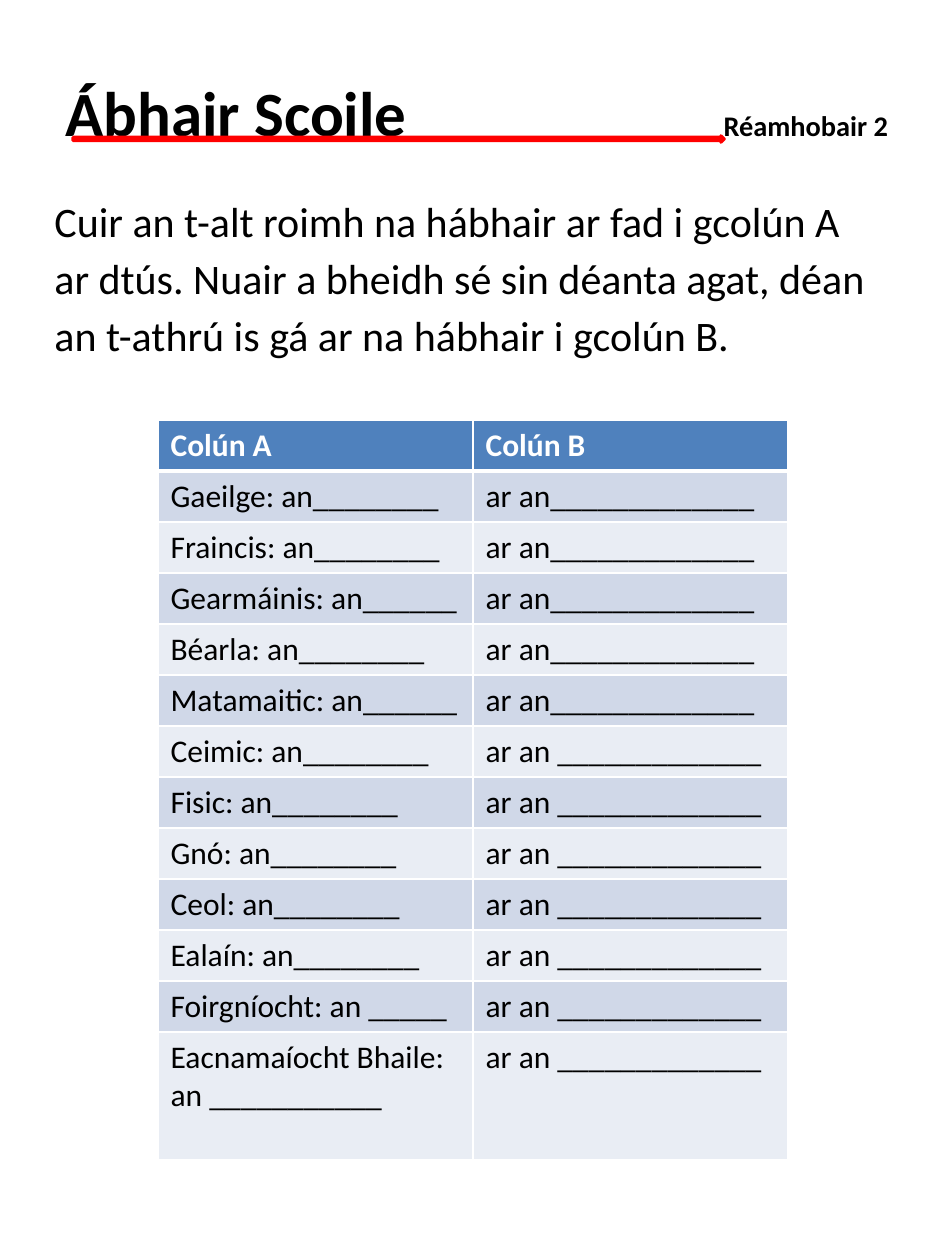
"""Build the Irish school-subjects worksheet slide."""
from lxml import etree
from pptx import Presentation
from pptx.dml.color import RGBColor
from pptx.enum.shapes import MSO_SHAPE
from pptx.enum.text import MSO_ANCHOR, MSO_AUTO_SIZE, PP_ALIGN
from pptx.oxml.ns import qn
from pptx.util import Emu, Pt

LEFT = PP_ALIGN.LEFT
MIDDLE = MSO_ANCHOR.MIDDLE
NO_FIT = MSO_AUTO_SIZE.NONE
RIGHT_ARROW = MSO_SHAPE.RIGHT_ARROW

FONT = "Calibri"
BLACK = RGBColor(0x00, 0x00, 0x00)
WHITE = RGBColor(0xFF, 0xFF, 0xFF)
RED = RGBColor(0xFF, 0x00, 0x00)
HEADER_BLUE = RGBColor(0x4F, 0x81, 0xBD)
BANDS = (RGBColor(0xD0, 0xD8, 0xE8), RGBColor(0xE9, 0xED, 0xF4))

TITLE_ONLY = 5
ROW_HEIGHT = 51
LAST_ROW_HEIGHT = 128
COLUMN_WIDTH = 315

INSTRUCTIONS = (
    "Cuir an t-alt roimh na hábhair ar fad i gcolún A",
    "ar dtús. Nuair a bheidh sé sin déanta agat, déan",
    "an t-athrú is gá ar na hábhair i gcolún B.",
)
BLANK = "_" * 13
SUBJECTS = (
    "Gaeilge: an________",
    "Fraincis: an________",
    "Gearmáinis: an______",
    "Béarla: an________",
    "Matamaitic: an______",
    "Ceimic: an________",
    "Fisic: an________",
    "Gnó: an________",
    "Ceol: an________",
    "Ealaín: an________",
    "Foirgníocht: an _____",
    "Eacnamaíocht Bhaile:\nan ___________",
)
UNSPACED_ANSWERS = 5


def px(length):
    """Turn pixels at 126 to the inch into EMU."""
    return Emu(round(length * 914400 / 126))


def box(left, top, width, height):
    """Return a position and size in EMU."""
    return px(left), px(top), px(width), px(height)


def add_text(paragraph, text, size=18, bold=False, color=BLACK):
    """Append a formatted run to a paragraph."""
    run = paragraph.add_run()
    run.text = text
    run.font.name = FONT
    run.font.size = Pt(size)
    run.font.bold = bold
    run.font.color.rgb = color


def add_lines(frame, lines, space_before=0, **text_format):
    """Fill a text frame with one paragraph for each line."""
    for index, line in enumerate(lines):
        paragraph = frame.add_paragraph() if index else frame.paragraphs[0]
        paragraph.alignment = LEFT
        paragraph.space_before = Pt(space_before)
        add_text(paragraph, line, **text_format)


def add_title(slide):
    """Set the heading and the class level after a tab stop."""
    heading = slide.shapes.title
    heading.left, heading.top, heading.width, heading.height = box(53, 53, 851, 117)
    frame = heading.text_frame
    frame.word_wrap = True
    frame.auto_size = NO_FIT
    frame.vertical_anchor = MIDDLE
    paragraph = frame.paragraphs[0]
    paragraph.alignment = LEFT
    tabs = etree.SubElement(paragraph._p.get_or_add_pPr(), qn("a:tabLst"))
    etree.SubElement(tabs, qn("a:tab"), pos=str(px(658)), algn="l")
    add_text(paragraph, "Ábhair Scoile\t", size=36, bold=True)
    add_text(paragraph, "Réamhobair 2", size=16.2, bold=True)


def add_instructions(slide):
    """Place the task description above the table."""
    frame = slide.shapes.add_textbox(*box(42, 189, 851, 190)).text_frame
    frame.word_wrap = True
    add_lines(frame, INSTRUCTIONS, space_before=4, size=24)


def add_underline(slide):
    """Draw the thin red arrow under the heading."""
    arrow = slide.shapes.add_shape(RIGHT_ARROW, *box(73, 136, 651, 6))
    arrow.shadow.inherit = False
    arrow.fill.solid()
    arrow.fill.fore_color.rgb = RED
    arrow.line.color.rgb = RED
    arrow.line.width = Pt(2)


def set_borders(cell, **widths):
    """Give a cell white borders with widths in points by side."""
    properties = cell._tc.get_or_add_tcPr()
    for index, (side, width) in enumerate(widths.items()):
        line = etree.Element(qn(f"a:{side}"), w=str(Pt(width)))
        fill = etree.SubElement(line, qn("a:solidFill"))
        etree.SubElement(fill, qn("a:srgbClr"), val=str(WHITE))
        properties.insert(index, line)


def fill_cell(cell, text, fill, top=1, bottom=1, **text_format):
    """Write a cell and set its fill and borders."""
    add_lines(cell.text_frame, text.split("\n"), **text_format)
    cell.fill.solid()
    cell.fill.fore_color.rgb = fill
    set_borders(cell, lnL=1, lnR=1, lnT=top, lnB=bottom)


def add_subject_table(slide):
    """Build the two-column table of school subjects."""
    row_count = len(SUBJECTS) + 1
    height = ROW_HEIGHT * len(SUBJECTS) + LAST_ROW_HEIGHT
    table = slide.shapes.add_table(
        row_count, 2, *box(158, 420, 2 * COLUMN_WIDTH, height)
    ).table
    for row in table.rows:
        row.height = px(ROW_HEIGHT)
    table.rows[row_count - 1].height = px(LAST_ROW_HEIGHT)
    for column, label in enumerate(("Colún A", "Colún B")):
        fill_cell(table.cell(0, column), label, HEADER_BLUE,
                  bottom=3, bold=True, color=WHITE)
    for index, subject in enumerate(SUBJECTS):
        gap = "" if index < UNSPACED_ANSWERS else " "
        for column, text in enumerate((subject, f"ar an{gap}{BLANK}")):
            fill_cell(table.cell(index + 1, column), text, BANDS[index % 2],
                      top=1 if index else 3)


def main():
    """Assemble and save the worksheet."""
    deck = Presentation()
    deck.slide_width, deck.slide_height = px(945), px(1260)
    slide = deck.slides.add_slide(deck.slide_layouts[TITLE_ONLY])
    add_instructions(slide)
    add_title(slide)
    add_subject_table(slide)
    add_underline(slide)
    deck.save("out.pptx")


if __name__ == "__main__":
    main()
